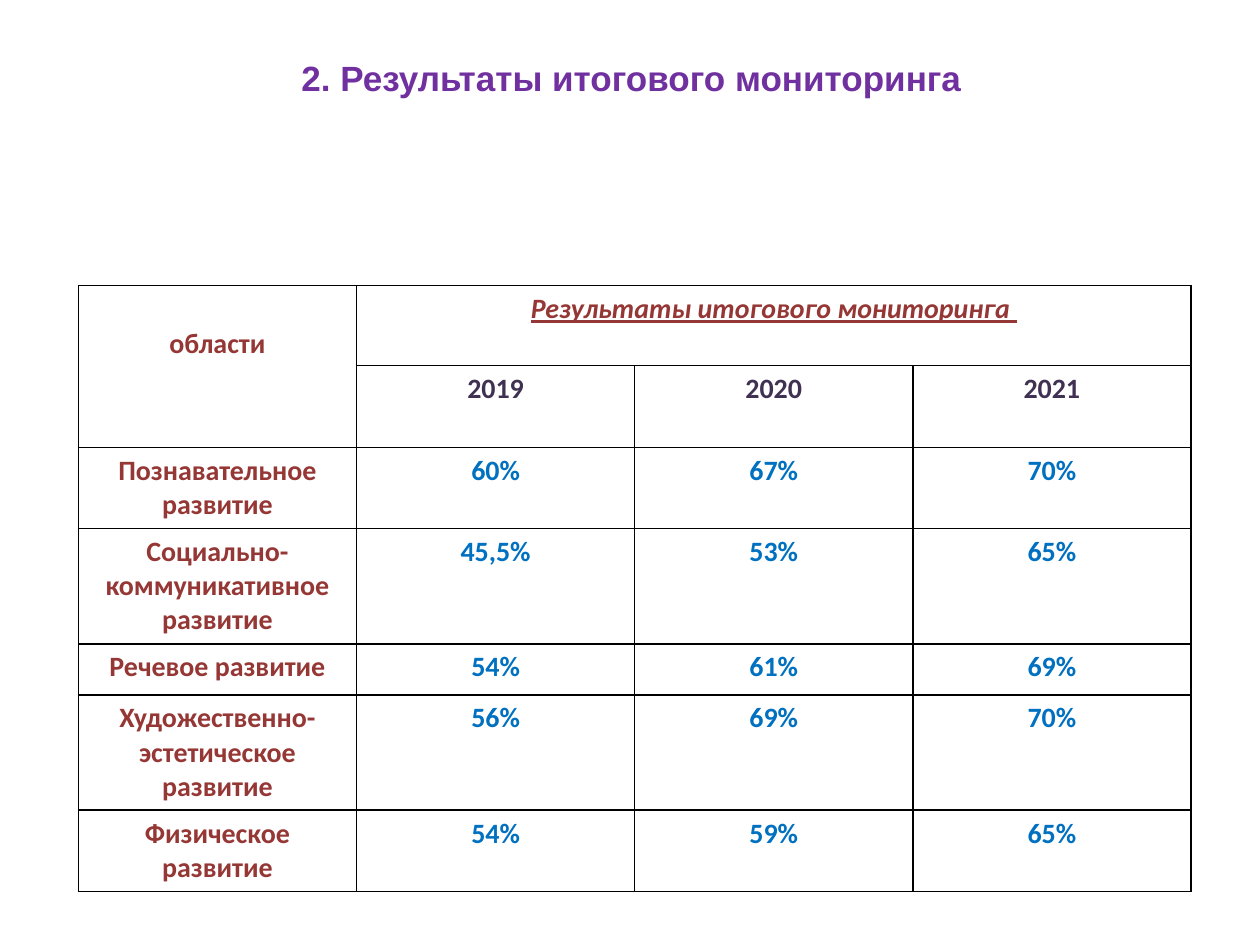
from lxml import etree
from pptx import Presentation
from pptx import util as u
from pptx.dml.color import RGBColor
from pptx.enum import text as t
from pptx.oxml import ns

PURPLE = RGBColor(0x70, 0x30, 0xA0)
RED = RGBColor(0x95, 0x37, 0x35)
PLUM = RGBColor(0x40, 0x31, 0x52)
BLUE = RGBColor(0x00, 0x70, 0xC0)
BLACK = RGBColor(0, 0, 0)
WHITE = RGBColor(0xFF, 0xFF, 0xFF)

YEARS = ["2019", "2020", "2021"]
AREAS = [
    ("Познавательное развитие", "60%", "67%", "70%"),
    ("Социально-коммуникативное развитие", "45,5%", "53%", "65%"),
    ("Речевое развитие", "54%", "61%", "69%"),
    ("Художественно-эстетическое развитие", "56%", "69%", "70%"),
    ("Физическое развитие", "54%", "59%", "65%"),
]
LINES = [2, 2, 2, 3, 1, 3, 2]
HEIGHTS = {1: 1.03, 2: 1.61, 3: 2.29}


def write(frame, words, color, size=16, font="Calibri", italic=False, under=False):
    par = frame.paragraphs[0]
    par.alignment = t.PP_ALIGN.CENTER
    run = par.add_run()
    run.text = words
    face = run.font
    face.name, face.size, face.bold = font, u.Pt(size), True
    face.italic, face.underline = italic, under
    face.color.rgb = color


def border(cell):
    props = cell._tc.get_or_add_tcPr()
    for side in ("lnL", "lnR", "lnT", "lnB"):
        line = etree.SubElement(props, ns.qn("a:" + side), w=str(u.Pt(1)))
        fill = etree.SubElement(line, ns.qn("a:solidFill"))
        etree.SubElement(fill, ns.qn("a:srgbClr"), val=str(BLACK))


def add_title(slide, left, top, width, height):
    title = slide.shapes.title
    title.left, title.top = u.Cm(left), u.Cm(top)
    title.width, title.height = u.Cm(width), u.Cm(height)
    title.fill.solid()
    title.fill.fore_color.rgb = WHITE
    frame = title.text_frame
    frame.word_wrap = False
    frame.auto_size = t.MSO_AUTO_SIZE.NONE
    frame.vertical_anchor = t.MSO_ANCHOR.MIDDLE
    write(frame, "2. Результаты итогового мониторинга", PURPLE, size=20, font="Arial")


def add_grid(slide, left, top, width):
    tall = [HEIGHTS[n] for n in LINES]
    cols = len(YEARS) + 1
    grid = slide.shapes.add_table(
        len(tall), cols, u.Cm(left), u.Cm(top), u.Cm(width), u.Cm(sum(tall))
    ).table
    grid.first_row = grid.horz_banding = False
    for col in grid.columns:
        col.width = u.Cm(width / cols)
    for row, high in zip(grid.rows, tall):
        row.height = u.Cm(high)
    for cell in grid.iter_cells():
        border(cell)
        cell.fill.background()

    corner, head = grid.cell(0, 0), grid.cell(0, 1)
    corner.merge(grid.cell(1, 0))
    head.merge(grid.cell(0, cols - 1))
    corner.margin_top = u.Cm(0.83)
    write(corner.text_frame, "области", RED)
    write(head.text_frame, "Результаты итогового мониторинга ", RED, italic=True, under=True)
    for c, year in enumerate(YEARS, 1):
        write(grid.cell(1, c).text_frame, year, PLUM)
    for r, area in enumerate(AREAS, 2):
        for c, words in enumerate(area):
            write(grid.cell(r, c).text_frame, words, BLUE if c else RED)


def main():
    deck = Presentation()
    deck.slide_width, deck.slide_height = u.Cm(25.4), u.Cm(19.05)
    slide = deck.slides.add_slide(deck.slide_layouts[5])
    add_title(slide, 5.77, 1, 13.92, 1.12)
    add_grid(slide, 1.58, 5.76, 22.43)
    deck.save("out.pptx")


if __name__ == "__main__":
    main()
